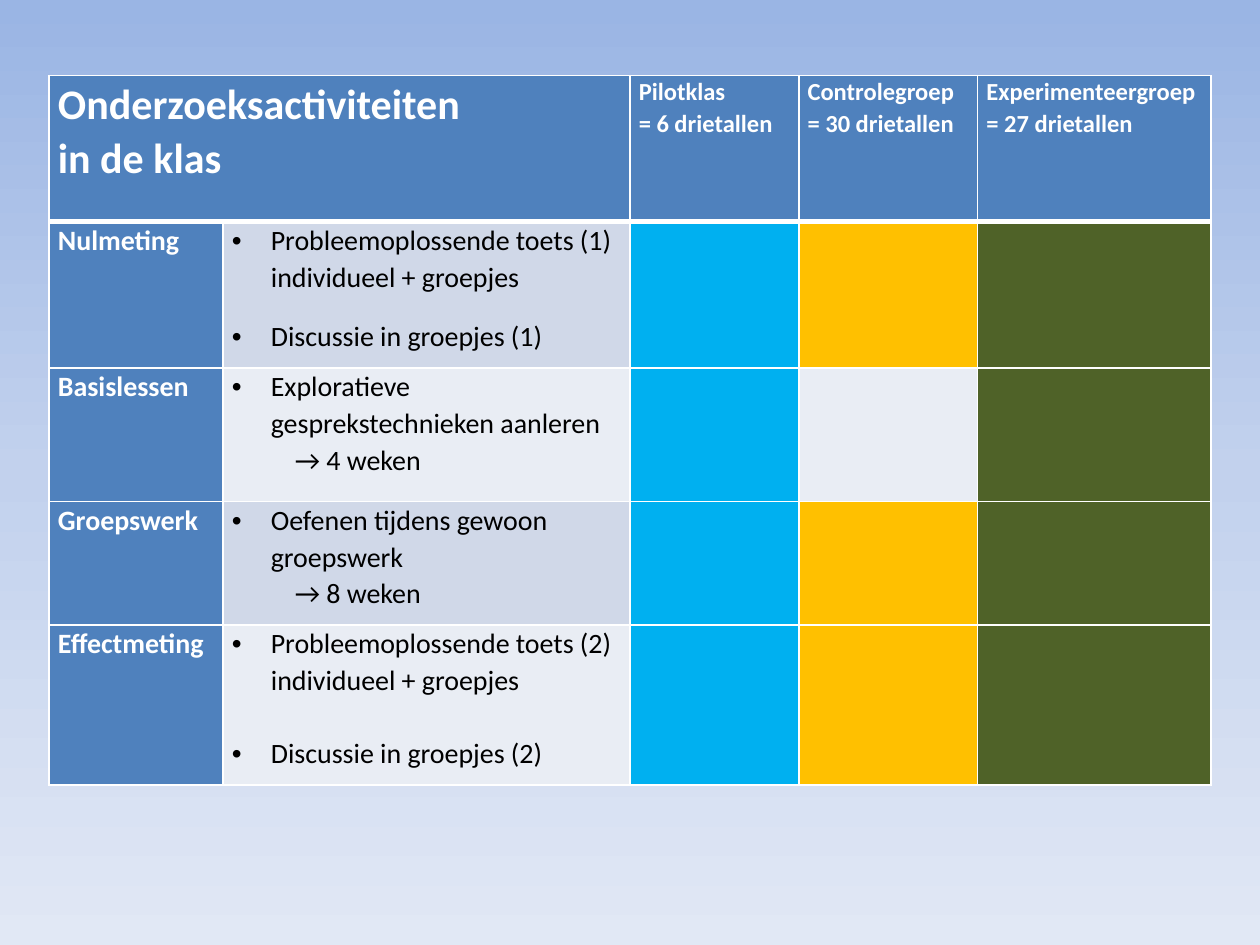
import pptx
import pptx.util
import pptx.dml.color
import pptx.oxml.ns
from lxml import etree
from pptx.util import Inches, Pt

COLORS = {
    "white": "FFFFFF", "black": "000000", "header": "4F81BD",
    "dark band": "D0D8E8", "light band": "E9EDF4",
    "pilot": "00B0F0", "control": "FFC000", "experiment": "4F6228",
}
BACKGROUND = {0: "9AB5E4", 50: "C2D1ED", 100: "E1E8F5"}
COLUMN_WIDTHS = [1.38, 3.23, 1.34, 1.42, 1.85]
ROW_HEIGHTS = [1.16, 1.16, 1.06, 0.98, 1.27]
TITLE = ["Onderzoeksactiviteiten", "in de klas"]
GROUPS = [
    ["Pilotklas", "= 6 drietallen"],
    ["Controlegroep", "= 30 drietallen"],
    ["Experimenteergroep", "= 27 drietallen"],
]
ACTIVITIES = [
    ("Nulmeting", ["Probleemoplossende toets (1) individueel + groepjes",
                   "Discussie in groepjes (1)"], 13),
    ("Basislessen", ["Exploratieve gesprekstechnieken aanleren", "→ 4 weken"], 0),
    ("Groepswerk", ["Oefenen tijdens gewoon groepswerk", "→ 8 weken"], 0),
    ("Effectmeting", ["Probleemoplossende toets (2) individueel + groepjes",
                      "Discussie in groepjes (2)"], 21),
]


def rgb(name):
    """Return the named colour."""
    return pptx.dml.color.RGBColor.from_string(COLORS[name])


def add_child(parent, tag, **attributes):
    """Append a DrawingML element to its parent."""
    child = etree.SubElement(parent, pptx.oxml.ns.qn(tag))
    for name, value in attributes.items():
        child.set(name, str(value))
    return child


def paint_background(page):
    """Fill the page with a vertical gradient."""
    fill = page.background.fill
    fill.gradient()
    fill.gradient_angle = 270
    stops = page.background._cSld.find(".//" + pptx.oxml.ns.qn("a:gsLst"))
    for stop in list(stops):
        stops.remove(stop)
    for position, color in BACKGROUND.items():
        stop = add_child(stops, "a:gs", pos=position * 1000)
        add_child(stop, "a:srgbClr", val=color)


def style_cell(cell, color, top=1, bottom=1):
    """Give a cell its margins, white borders and fill."""
    margins = {"margin_left": 0.07, "margin_right": 0.07,
               "margin_top": 0, "margin_bottom": 0}
    for name, value in margins.items():
        setattr(cell, name, Inches(value))
    properties = cell._tc.get_or_add_tcPr()
    for side, width in {"L": 1, "R": 1, "T": top, "B": bottom}.items():
        line = add_child(properties, "a:ln" + side, w=Pt(width))
        add_child(add_child(line, "a:solidFill"), "a:srgbClr", val=COLORS["white"])
    cell.fill.solid()
    cell.fill.fore_color.rgb = rgb(color)


def write_lines(cell, lines, size, color="white", bold=True):
    """Write one paragraph per line and return the paragraphs."""
    frame = cell.text_frame
    frame.text = "\n".join(lines)
    for para in frame.paragraphs:
        para.line_spacing = 1.07
        span = para.runs[0]
        formats = {"name": "Calibri", "size": Pt(size), "bold": bold}
        for name, value in formats.items():
            setattr(span.font, name, value)
        span.font.color.rgb = rgb(color)
    return frame.paragraphs


def write_activity(cell, lines, gap):
    """Write bulleted items, with arrow lines indented below them."""
    paragraphs = write_lines(cell, lines, 16, "black", False)
    for para, line in zip(paragraphs, lines):
        properties = para._p.get_or_add_pPr()
        if line.startswith("→"):
            para.level = 1
            left, hanging = 0.5, 0
            add_child(properties, "a:buNone")
        else:
            left, hanging = 0.31, -0.31
            add_child(properties, "a:buFont", typeface="Arial")
            add_child(properties, "a:buChar", char="•")
        properties.set("marL", str(Inches(left)))
        properties.set("indent", str(Inches(hanging)))
    if gap:
        paragraphs[-1].space_before = Pt(gap)


def add_activity_table(page):
    """Add the empty table with its column widths and row heights."""
    frame = page.shapes.add_table(
        len(ROW_HEIGHTS), len(COLUMN_WIDTHS), Inches(0.39), Inches(0.6),
        Inches(sum(COLUMN_WIDTHS)), Inches(sum(ROW_HEIGHTS)))
    table = frame.table
    table.first_row = True
    table.horz_banding = False
    for column, width in zip(table.columns, COLUMN_WIDTHS):
        column.width = Inches(width)
    for row, height in zip(table.rows, ROW_HEIGHTS):
        row.height = Inches(height)
    return table


def fill_header(table):
    """Write the title and the three group headings."""
    for column in range(len(COLUMN_WIDTHS)):
        style_cell(table.cell(0, column), "header", bottom=3)
    table.cell(0, 0).merge(table.cell(0, 1))
    write_lines(table.cell(0, 0), TITLE, 24)
    for column, lines in enumerate(GROUPS, 2):
        write_lines(table.cell(0, column), lines, 14)


def fill_activities(table):
    """Write the activities and colour the groups that take part."""
    for row, (phase, lines, gap) in enumerate(ACTIVITIES, 1):
        band = "dark band" if row % 2 else "light band"
        control = band if phase == "Basislessen" else "control"
        fills = ["header", band, "pilot", control, "experiment"]
        for column, color in enumerate(fills):
            style_cell(table.cell(row, column), color, top=3 if row == 1 else 1)
        write_lines(table.cell(row, 0), [phase], 16)
        write_activity(table.cell(row, 1), lines, gap)


def main():
    """Build the slide and save it."""
    deck = pptx.Presentation()
    deck.slide_width, deck.slide_height = Inches(10), Inches(7.5)
    page = deck.slides.add_slide(deck.slide_layouts[6])
    paint_background(page)
    table = add_activity_table(page)
    fill_header(table)
    fill_activities(table)
    deck.save("out.pptx")


if __name__ == "__main__":
    main()
